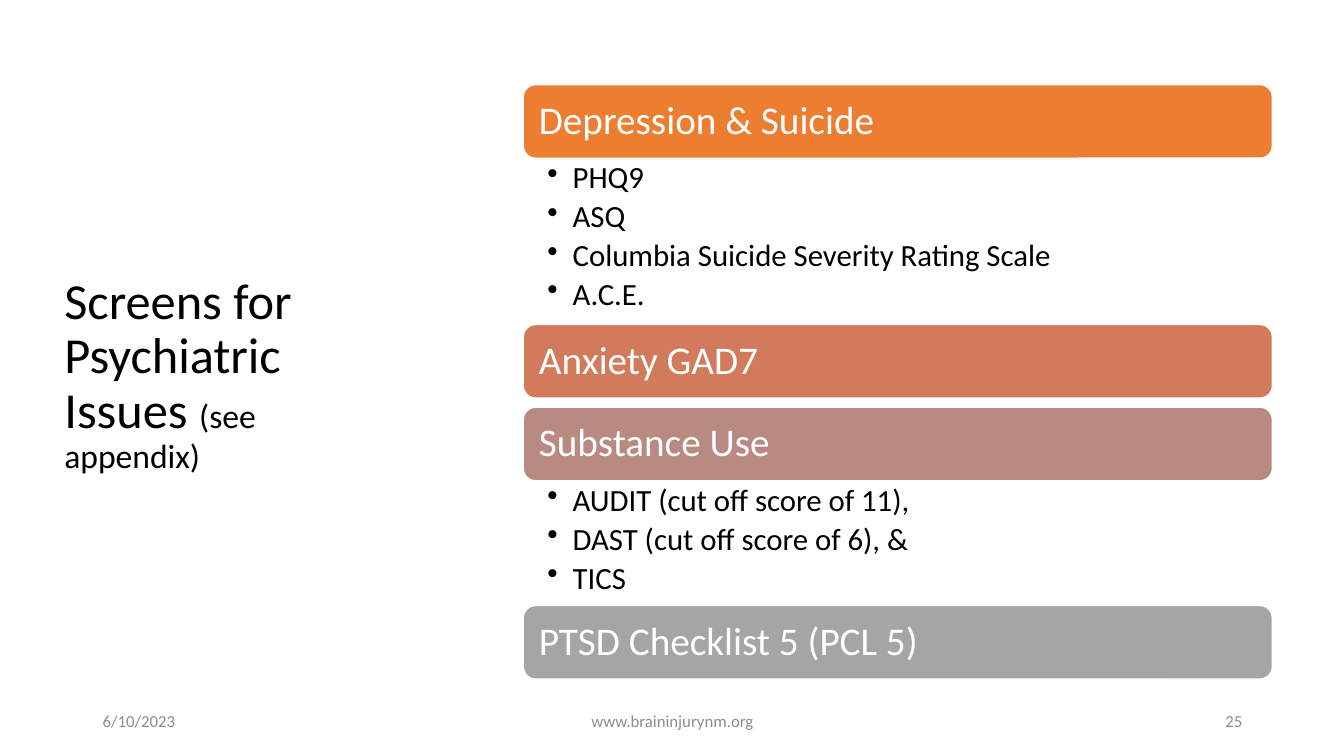
from dataclasses import dataclass

from lxml.etree import SubElement
from pptx import Presentation
from pptx.dml.color import RGBColor
from pptx.enum.shapes import MSO_SHAPE as Shape
from pptx.enum.text import MSO_ANCHOR as Anchor, PP_ALIGN as Align
from pptx.oxml.ns import qn
from pptx.util import Inches, Pt

COLORS = {
    "black": "000000",
    "white": "FFFFFF",
    "footer": "8C8C8C",
    "orange": "ED7D31",
    "terracotta": "D17B5C",
    "rose": "B98A82",
    "gray": "A5A5A5",
}
FONT = "Calibri"
LIST_LEFT, LIST_TOP, LIST_WIDTH = 5.19, 0.84, 7.43
BAR_HEIGHT = 0.73
BAR_GAP = 0.09
SCREEN_HEIGHT = 1.65 / 4


@dataclass
class Category:
    title: str
    color: str
    screens: tuple[str, ...] = ()


@dataclass
class Footer:
    text: str
    left: float
    width: float
    align: Align


CATEGORIES = [
    Category("Depression & Suicide", "orange",
             ("PHQ9", "ASQ", "Columbia Suicide Severity Rating Scale", "A.C.E.")),
    Category("Anxiety GAD7", "terracotta"),
    Category("Substance Use", "rose",
             ("AUDIT (cut off score of 11),", "DAST (cut off score of 6), &", "TICS")),
    Category("PTSD Checklist 5 (PCL 5)", "gray"),
]
FOOTERS = [
    Footer("6/10/2023", 0.92, 3, Align.LEFT),
    Footer("www.braininjurynm.org", 4.42, 4.5, Align.CENTER),
    Footer("25", 9.42, 3, Align.RIGHT),
]


def rgb(name: str) -> RGBColor:
    return RGBColor.from_string(COLORS[name])


def set_font(font, size: float, color: str) -> None:
    font.name = FONT
    font.size = Pt(size)
    font.color.rgb = rgb(color)


def add_text_frame(slide, left: float, top: float, width: float, height: float,
                   anchor: Anchor = Anchor.MIDDLE):
    box = slide.shapes.add_textbox(Inches(left), Inches(top), Inches(width), Inches(height))
    frame = box.text_frame
    frame.word_wrap = True
    frame.vertical_anchor = anchor
    return frame


def add_bullet(paragraph) -> None:
    properties = paragraph._p.get_or_add_pPr()
    properties.set("marL", str(Inches(0.25)))
    properties.set("indent", str(-Inches(0.25)))
    SubElement(properties, qn("a:buChar"), char="•")


def add_title(slide) -> None:
    paragraph = add_text_frame(slide, 0.54, 0.57, 3.37, 6.31).paragraphs[0]
    paragraph.line_spacing = 0.9
    for text, size in (("Screens for Psychiatric Issues ", 36), ("(see appendix)", 24)):
        run = paragraph.add_run()
        run.text = text
        set_font(run.font, size, "black")


def add_bar(slide, category: Category, top: float) -> None:
    bar = slide.shapes.add_shape(Shape.ROUNDED_RECTANGLE, Inches(LIST_LEFT), Inches(top),
                                 Inches(LIST_WIDTH), Inches(BAR_HEIGHT))
    bar.shadow.inherit = False
    bar.fill.solid()
    bar.fill.fore_color.rgb = rgb(category.color)
    bar.line.color.rgb = rgb("white")
    bar.line.width = Pt(1)
    frame = bar.text_frame
    frame.word_wrap = True
    frame.vertical_anchor = Anchor.MIDDLE
    frame.margin_left = frame.margin_right = Inches(0.12)
    paragraph = frame.paragraphs[0]
    paragraph.text = category.title
    paragraph.alignment = Align.LEFT
    paragraph.line_spacing = 0.9
    set_font(paragraph.font, 28, "white")


def add_screens(slide, screens: tuple[str, ...], top: float, height: float) -> None:
    frame = add_text_frame(slide, LIST_LEFT, top, LIST_WIDTH, height, Anchor.TOP)
    frame.margin_left, frame.margin_right = Inches(0.24), Inches(0.22)
    frame.margin_top = frame.margin_bottom = Inches(0.04)
    for index, screen in enumerate(screens):
        paragraph = frame.add_paragraph() if index else frame.paragraphs[0]
        paragraph.text = screen
        paragraph.line_spacing = 0.9
        paragraph.space_after = Pt(4)
        add_bullet(paragraph)
        set_font(paragraph.font, 22, "black")


def add_categories(slide) -> None:
    """Stack the bars, each followed by its screens or by a small gap."""
    top = LIST_TOP
    for category in CATEGORIES:
        add_bar(slide, category, top)
        top += BAR_HEIGHT
        if category.screens:
            height = SCREEN_HEIGHT * len(category.screens)
            add_screens(slide, category.screens, top, height)
            top += height
        else:
            top += BAR_GAP


def add_footer(slide, footer: Footer) -> None:
    paragraph = add_text_frame(slide, footer.left, 6.95, footer.width, 0.4).paragraphs[0]
    paragraph.text = footer.text
    paragraph.alignment = footer.align
    set_font(paragraph.font, 12, "footer")


def main() -> None:
    presentation = Presentation()
    presentation.slide_width, presentation.slide_height = Inches(13.33), Inches(7.5)
    slide = presentation.slides.add_slide(presentation.slide_layouts[6])
    add_title(slide)
    add_categories(slide)
    for footer in FOOTERS:
        add_footer(slide, footer)
    presentation.save("out.pptx")


if __name__ == "__main__":
    main()
